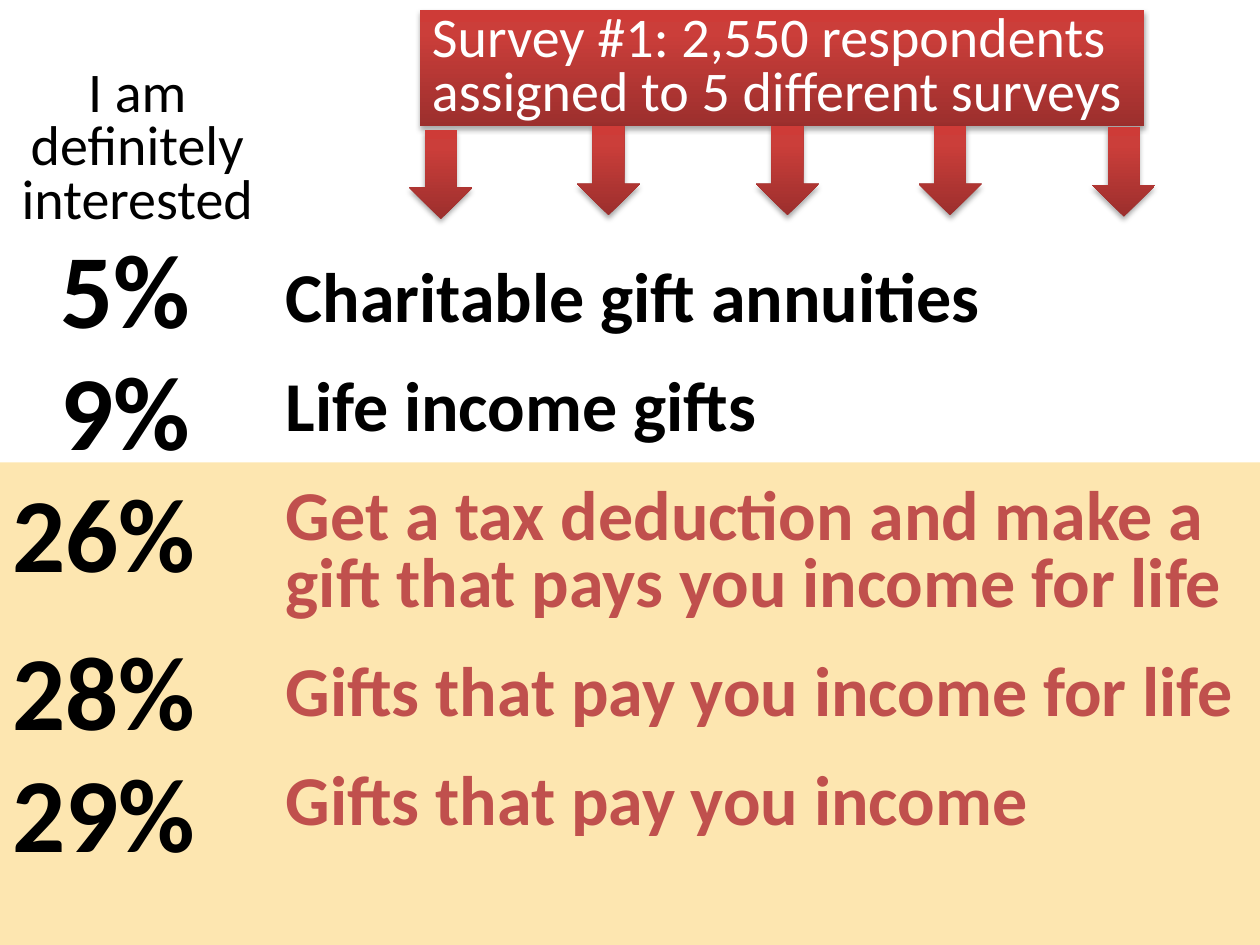
from lxml import etree
from pptx import Presentation
from pptx.dml.color import RGBColor
from pptx.enum.shapes import MSO_SHAPE
from pptx.enum.text import MSO_ANCHOR, PP_ALIGN
from pptx.oxml import parse_xml
from pptx.oxml.ns import qn
from pptx.util import Inches, Pt

RECT, ARROW = MSO_SHAPE.RECTANGLE, MSO_SHAPE.DOWN_ARROW
LEFT, CENTER = PP_ALIGN.LEFT, PP_ALIGN.CENTER
TOP, MIDDLE = MSO_ANCHOR.TOP, MSO_ANCHOR.MIDDLE
NS = 'xmlns:a="http://schemas.openxmlformats.org/drawingml/2006/main"'
BLACK, WHITE, RED, CREAM = "000000", "FFFFFF", "C0504D", "FDCE62"
STOPS = [(0, "9C2F2D"), (80, "CB3E3A"), (100, "CE3B37")]
ARROWS = [(3.25, 1.03), (4.58, 1), (6, 1), (7.29, 1), (8.67, 1.01)]
RATES = [("5%", 0.38, 12), ("9%", 0.38, 12), ("26%", 0, 33), ("28%", 0, 12), ("29%", 0, 12)]
GIFTS = [
    ("Charitable gift annuities", BLACK),
    ("Life income gifts", BLACK),
    ("Get a tax deduction and make a gift that pays you income for life", RED),
    ("Gifts that pay you income for life", RED),
    ("Gifts that pay you income", RED),
]


def color(code):
    """Turn a hex string into a colour."""
    return RGBColor.from_string(code)


def add_shape(slide, kind, box):
    """Add a preset shape without line or theme shadow."""
    shape = slide.shapes.add_shape(kind, *map(Inches, box))
    shape.shadow.inherit = False
    shape.line.fill.background()
    return shape


def add_band(slide, box):
    """Add the half-transparent band behind the best results."""
    band = add_shape(slide, RECT, box)
    band.fill.solid()
    band.fill.fore_color.rgb = color(CREAM)
    tint = band.fill._xPr.find(qn("a:solidFill"))[0]
    etree.SubElement(tint, qn("a:alpha"), val="50000")


def add_glossy(slide, kind, box):
    """Add a shape with the red gradient and a soft shadow."""
    shape = add_shape(slide, kind, box)
    stops = "".join(
        f'<a:gs pos="{pos * 1000}"><a:srgbClr val="{code}"/></a:gs>' for pos, code in STOPS
    )
    grad = parse_xml(
        f'<a:gradFill {NS} rotWithShape="1"><a:gsLst>{stops}</a:gsLst>'
        '<a:lin ang="16200000" scaled="0"/></a:gradFill>'
    )
    props = shape._element.spPr
    props.find(qn("a:prstGeom")).addnext(grad)
    props.find(qn("a:effectLst")).append(parse_xml(
        f'<a:outerShdw {NS} blurRad="40000" dist="23000" dir="5400000" rotWithShape="0">'
        '<a:srgbClr val="000000"><a:alpha val="35000"/></a:srgbClr></a:outerShdw>'
    ))
    return shape


def write(para, text, size, code=BLACK, bold=False, after=24, align=LEFT, indent=0):
    """Fill one paragraph with formatted text."""
    looks = {"line_spacing": 0.8, "space_after": Pt(after), "alignment": align}
    for name, value in looks.items():
        setattr(para, name, value)
    if indent:
        para._p.get_or_add_pPr().set("marL", str(Inches(indent)))
    run = para.add_run()
    run.text = text
    for name, value in {"name": "Calibri", "size": Pt(size), "bold": bold}.items():
        setattr(run.font, name, value)
    run.font.color.rgb = color(code)


def fill_text(shape, items, anchor=TOP):
    """Write a list of paragraph formats into a shape."""
    frame = shape.text_frame
    for name, value in {"word_wrap": True, "vertical_anchor": anchor}.items():
        setattr(frame, name, value)
    for i, item in enumerate(items):
        write(frame.add_paragraph() if i else frame.paragraphs[0], **item)


def add_text(slide, box, items):
    """Add a wrapped text box."""
    fill_text(slide.shapes.add_textbox(*map(Inches, box)), items)


def main():
    """Build and save the survey slide."""
    deck = Presentation()
    deck.slide_width, deck.slide_height = Inches(10), Inches(7.5)
    slide = deck.slides.add_slide(deck.slide_layouts[6])
    add_band(slide, (0, 3.67, 10, 3.83))
    add_text(slide, (0.01, 0.5, 2.16, 1.21), [
        {"text": "I am definitely interested", "size": 32, "align": CENTER},
    ])
    add_text(slide, (0, 1.92, 2.08, 4.75), [
        {"text": rate, "size": 60, "bold": True, "after": after, "indent": indent}
        for rate, indent, after in RATES
    ])
    add_text(slide, (2.17, 2.08, 7.75, 4.75), [
        {"text": gift, "size": 40, "bold": True, "code": code} for gift, code in GIFTS
    ])
    head = add_glossy(slide, RECT, (3.33, 0.08, 5.75, 0.92))
    fill_text(head, [{
        "text": "Survey #1: 2,550 respondents assigned to 5 different surveys",
        "size": 32,
        "code": WHITE,
    }], MIDDLE)
    for left, top in ARROWS:
        add_glossy(slide, ARROW, (left, top, 0.5, 0.71))
    deck.save("out.pptx")


if __name__ == "__main__":
    main()
